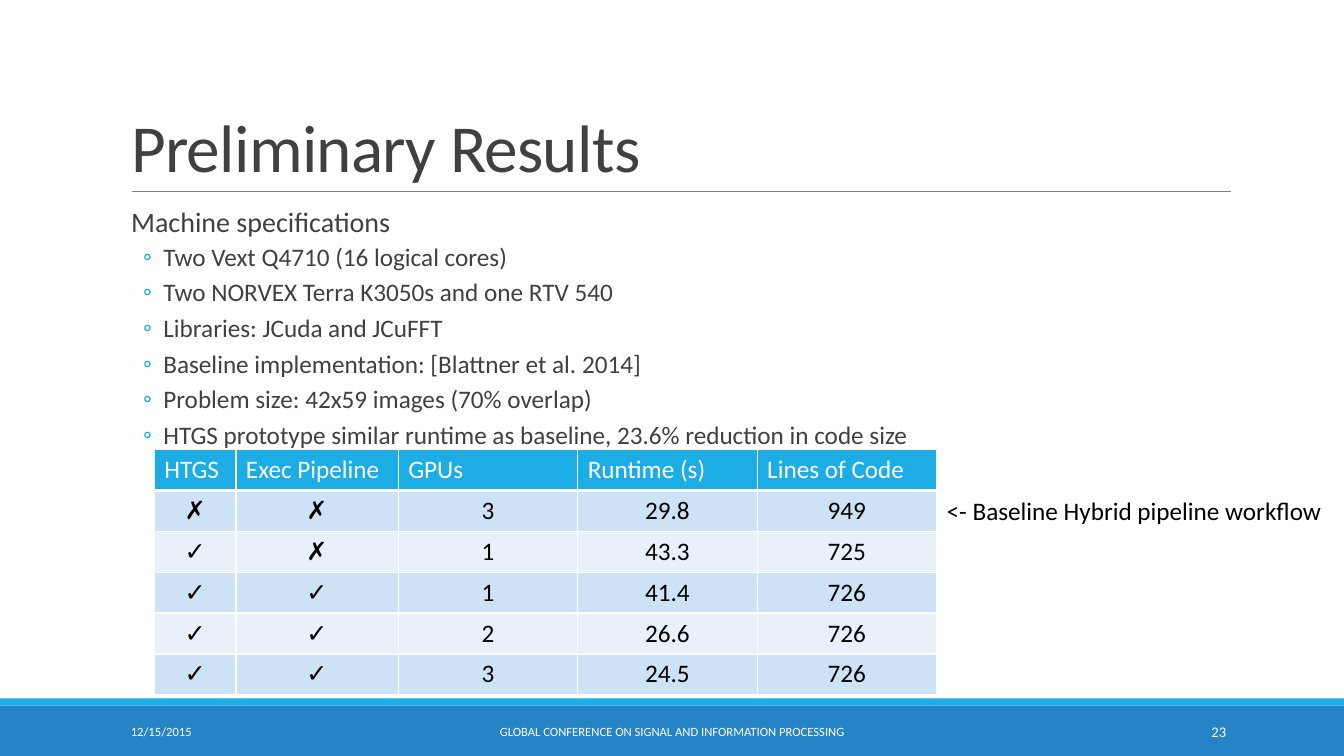
from lxml.etree import SubElement
from pptx import Presentation
from pptx.dml.color import RGBColor
from pptx.enum.shapes import MSO_CONNECTOR as Connector, MSO_SHAPE as Shape
from pptx.enum.text import MSO_ANCHOR as Anchor, MSO_AUTO_SIZE as AutoSize, PP_ALIGN as Align
from pptx.oxml import parse_xml
from pptx.oxml.ns import nsdecls, qn
from pptx.util import Inches, Pt

WIDTH, HEIGHT = 13.33, 7.5
FONT = "Calibri"
DARK, BLACK, WHITE, GRAY = "404040", "000000", "FFFFFF", "808080"
CYAN, BLUE = "1CADE4", "2683C6"
BANDS = ("CDE3F5", "E8F1FA")

TITLE = "Preliminary Results"
HEADING = "Machine specifications"
DETAILS = [
    "Two Vext Q4710 (16 logical cores)",
    "Two NORVEX Terra K3050s and one RTV 540",
    "Libraries: JCuda and JCuFFT",
    "Baseline implementation: [Blattner et al. 2014]",
    "Problem size: 42x59 images (70% overlap)",
    "HTGS prototype similar runtime as baseline, 23.6% reduction in code size",
]
RESULTS = [
    ("HTGS", "Exec Pipeline", "GPUs", "Runtime (s)", "Lines of Code"),
    ("✗", "✗", "3", "29.8", "949"),
    ("✓", "✗", "1", "43.3", "725"),
    ("✓", "✓", "1", "41.4", "726"),
    ("✓", "✓", "2", "26.6", "726"),
    ("✓", "✓", "3", "24.5", "726"),
]
COLUMNS = (0.81, 1.61, 1.78, 1.78, 1.78)
ROW = 0.405
TABLE_LEFT, TABLE_TOP = 1.53, 4.46
NOTE = "<- Baseline Hybrid pipeline workflow"
FOOTER = [
    ("12/15/2015", 1.2, 2.7, 9, Align.LEFT),
    ("GLOBAL CONFERENCE ON SIGNAL AND INFORMATION PROCESSING", 4.03, 5.27, 9, Align.CENTER),
    ("23", 10.83, 1.43, 10.5, Align.RIGHT),
]
BARS = [(HEIGHT - 0.5, 0.5, BLUE), (HEIGHT - 0.57, 0.07, CYAN)]


def color(value):
    return RGBColor.from_string(value)


def box(left, top, width, height):
    return [Inches(length) for length in (left, top, width, height)]


def place(shape, *lengths):
    shape.left, shape.top, shape.width, shape.height = box(*lengths)


def write(paragraph, text, size, fill, align=Align.LEFT):
    paragraph.alignment = align
    run = paragraph.add_run()
    run.text = text
    run.font.name, run.font.size, run.font.bold = FONT, Pt(size), False
    run.font.color.rgb = color(fill)
    return run


def add_text(slide, text, lengths, size, fill, align=Align.LEFT, anchor=Anchor.TOP, wrap=True):
    frame = slide.shapes.add_textbox(*box(*lengths)).text_frame
    frame.word_wrap, frame.vertical_anchor = wrap, anchor
    write(frame.paragraphs[0], text, size, fill, align)


def space(paragraph, before, after, margin, indent, bullet=None):
    paragraph.line_spacing = 0.9
    paragraph.space_before, paragraph.space_after = Pt(before), Pt(after)
    properties = paragraph._p.get_or_add_pPr()
    properties.set("marL", str(Inches(margin)))
    properties.set("indent", str(Inches(indent)))
    if bullet:
        tint = SubElement(properties, qn("a:buClr"))
        SubElement(tint, qn("a:srgbClr"), val=CYAN)
        SubElement(properties, qn("a:buFont"), typeface=FONT)
        SubElement(properties, qn("a:buChar"), char=bullet)
    else:
        SubElement(properties, qn("a:buNone"))


def set_borders(cell, bottom):
    properties = cell._tc.get_or_add_tcPr()
    for position, side in enumerate("LRTB"):
        width = Pt(bottom if side == "B" else 1)
        properties.insert(position, parse_xml(
            f'<a:ln{side} {nsdecls("a")} w="{width}"><a:solidFill>'
            f'<a:srgbClr val="{WHITE}"/></a:solidFill></a:ln{side}>'))


def add_bars_and_rule(slide):
    for top, height, fill in BARS:
        bar = slide.shapes.add_shape(Shape.RECTANGLE, *box(0, top, WIDTH, height))
        bar.shadow.inherit = False
        bar.fill.solid()
        bar.fill.fore_color.rgb = color(fill)
        bar.line.fill.background()
    rule = slide.shapes.add_connector(Connector.STRAIGHT, *box(1.31, 1.9, 12.21, 1.9))
    rule.line.color.rgb, rule.line.width = color(GRAY), Pt(0.5)
    SubElement(rule._element.spPr, qn("a:effectLst"))


def fill_title(title):
    place(title, 1.2, 0.31, 11, 1.59)
    frame = title.text_frame
    frame.auto_size, frame.vertical_anchor = AutoSize.NONE, Anchor.BOTTOM
    frame.paragraphs[0].line_spacing = 0.85
    run = write(frame.paragraphs[0], TITLE, 48, DARK)
    run.font._element.set("spc", "-50")


def fill_body(body):
    place(body, 1.2, 2.02, 11, 4.4)
    frame = body.text_frame
    frame.auto_size, frame.vertical_anchor = AutoSize.NONE, Anchor.TOP
    frame.margin_left = frame.margin_right = 0
    heading = frame.paragraphs[0]
    space(heading, 12, 2, 0.1, 0)
    write(heading, HEADING, 20, DARK)
    for detail in DETAILS:
        paragraph = frame.add_paragraph()
        paragraph.level = 1
        space(paragraph, 2, 4, 0.42, -0.2, "◦")
        write(paragraph, detail, 18, DARK)


def add_results(slide):
    lengths = box(TABLE_LEFT, TABLE_TOP, sum(COLUMNS), ROW * len(RESULTS))
    table = slide.shapes.add_table(len(RESULTS), len(COLUMNS), *lengths).table
    table.horz_banding = False
    for column, width in zip(table.columns, COLUMNS):
        column.width = Inches(width)
    for number, values in enumerate(RESULTS):
        table.rows[number].height = Inches(ROW)
        header = number == 0
        for column, value in enumerate(values):
            cell = table.cell(number, column)
            cell.fill.solid()
            cell.fill.fore_color.rgb = color(CYAN if header else BANDS[(number - 1) % 2])
            set_borders(cell, 3 if header else 1)
            write(cell.text_frame.paragraphs[0], value, 18,
                  WHITE if header else BLACK, Align.LEFT if header else Align.CENTER)


def main():
    presentation = Presentation()
    presentation.slide_width, presentation.slide_height = Inches(WIDTH), Inches(HEIGHT)
    slide = presentation.slides.add_slide(presentation.slide_layouts[1])
    add_bars_and_rule(slide)
    fill_title(slide.shapes.title)
    fill_body(slide.placeholders[1])
    add_results(slide)
    note_box = (TABLE_LEFT + sum(COLUMNS), TABLE_TOP + ROW, 4.15, 0.4)
    add_text(slide, NOTE, note_box, 18, BLACK, wrap=False)
    for text, left, width, size, align in FOOTER:
        add_text(slide, text, (left, 7.06, width, 0.4), size, WHITE, align, Anchor.MIDDLE)
    presentation.save("out.pptx")


if __name__ == "__main__":
    main()
